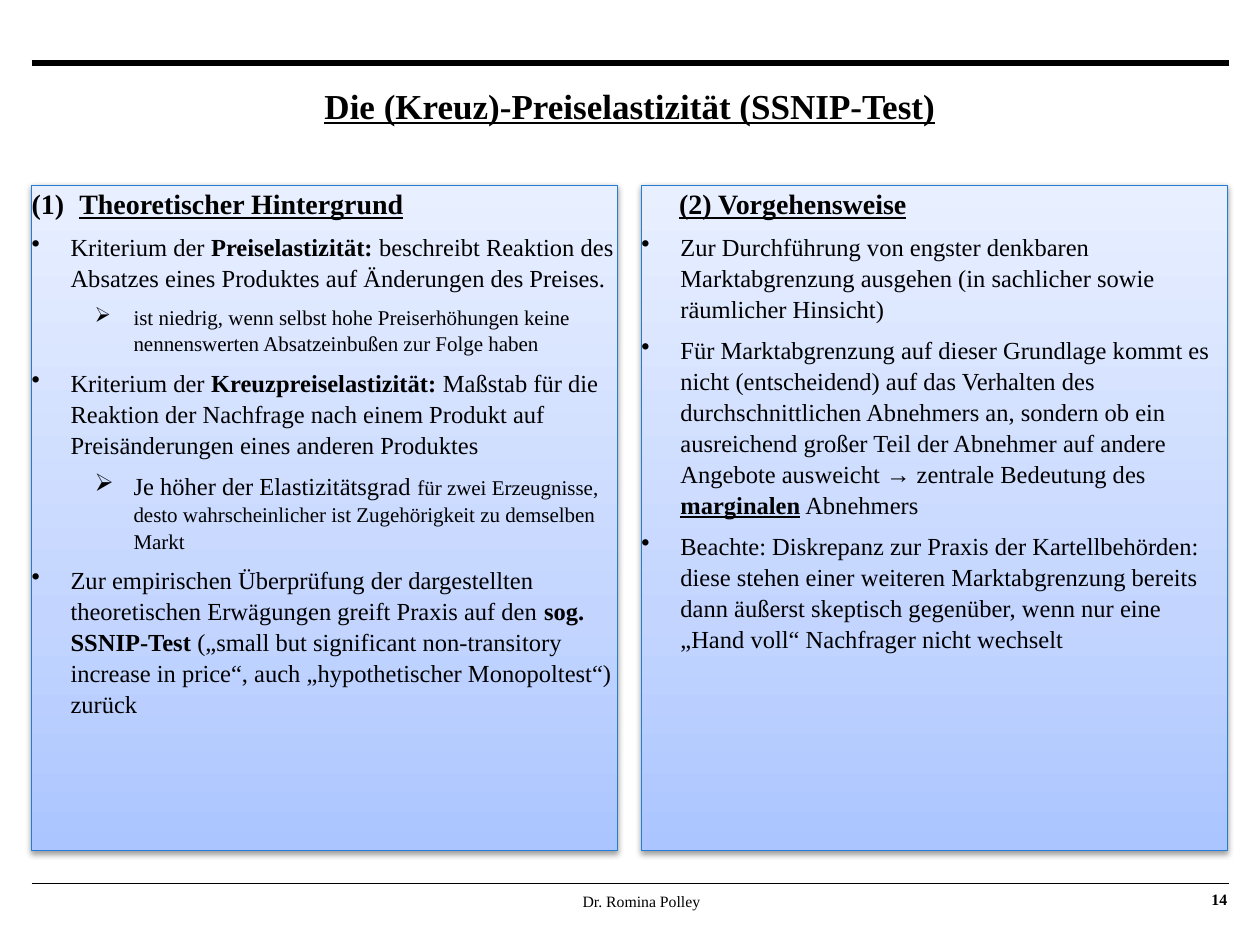
from copy import deepcopy
from lxml import etree
from pptx import Presentation, util as u
from pptx.dml.color import RGBColor
from pptx.enum import shapes, text
from pptx.oxml import ns

presentation = Presentation()
presentation.slide_width = u.Inches(10)
presentation.slide_height = u.Inches(7.5)
slide = presentation.slides.add_slide(presentation.slide_layouts[6])
column = presentation.slide_width / 40
row = presentation.slide_height / 30


def color(value):
    return RGBColor.from_string(value)


def write(paragraph, runs, size):
    paragraph.font.name = "Times New Roman"
    paragraph.font.size = u.Pt(size)
    paragraph.font.color.rgb = color("000000")
    for words, style in runs:
        run = paragraph.add_run()
        run.text = words
        if "b" in style:
            run.font.bold = True
        if "u" in style:
            run.font.underline = True
        if "s" in style:
            run.font.size = u.Pt(12)


for line_row, weight in [(2, 3), (28.04, 0.5)]:
    line = slide.shapes.add_connector(
        shapes.MSO_CONNECTOR.STRAIGHT,
        int(column), int(line_row * row), int(39 * column), int(line_row * row))
    line.line.color.rgb = color("000000")
    line.line.width = u.Pt(weight)
    etree.SubElement(line._element.spPr, ns.qn("a:effectLst"))

top, middle = text.MSO_ANCHOR.TOP, text.MSO_ANCHOR.MIDDLE
center, right = text.PP_ALIGN.CENTER, text.PP_ALIGN.RIGHT
labels = [
    ("Die (Kreuz)-Preiselastizität (SSNIP-Test)", "bu", 20, center, top, 1, 2.68, 38, 2.56, 0),
    ("Dr. Romina Polley", "", 9, center, middle, 6.32, 28.32, 28.08, 0.8, 0.2),
    ("14", "b", 9, right, middle, 36.32, 28.04, 2.64, 1.04, 0),
]
for words, style, size, alignment, anchor, left, upper, width, height, inset in labels:
    label = slide.shapes.add_textbox(
        int(left * column), int(upper * row), int(width * column), int(height * row))
    frame = label.text_frame
    frame.word_wrap = True
    frame.vertical_anchor = anchor
    frame.margin_left = frame.margin_right = u.Inches(inset)
    frame.margin_top = 0
    frame.margin_bottom = u.Inches(inset / 4)
    frame.paragraphs[0].alignment = alignment
    write(frame.paragraphs[0], [(words, style)], size)

kinds = {
    "number": (16, 0.38, -0.38, "buAutoNum", {"type": "arabicParenBoth"}),
    "heading": (16, 0.3, 0, "buNone", {}),
    "point": (14, 0.31, -0.31, "buChar", {"char": "•"}),
    "detail": (14, 0.81, -0.31, "buChar", {"char": "➢"}),
}
theory = [
    ("number", [("Theoretischer Hintergrund", "bu")]),
    ("point", [
        ("Kriterium der ", ""),
        ("Preiselastizität: ", "b"),
        ("beschreibt Reaktion des Absatzes eines Produktes auf Änderungen des Preises.", "")]),
    ("detail", [
        ("ist niedrig, wenn selbst hohe Preiserhöhungen keine nennenswerten "
         "Absatzeinbußen zur Folge haben", "s")]),
    ("point", [
        ("Kriterium der ", ""),
        ("Kreuzpreiselastizität: ", "b"),
        ("Maßstab für die Reaktion der Nachfrage nach einem Produkt auf "
         "Preisänderungen eines anderen Produktes", "")]),
    ("detail", [
        ("Je höher der Elastizitätsgrad ", ""),
        ("für zwei Erzeugnisse, desto wahrscheinlicher ist Zugehörigkeit zu "
         "demselben Markt", "s")]),
    ("point", [
        ("Zur empirischen Überprüfung der dargestellten theoretischen Erwägungen "
         "greift Praxis auf den ", ""),
        ("sog. SSNIP-Test ", "b"),
        ("(„small but significant non-transitory increase in price“, auch "
         "„hypothetischer Monopoltest“) zurück", "")]),
]
procedure = [
    ("heading", [("(2) Vorgehensweise", "bu")]),
    ("point", [
        ("Zur Durchführung von engster denkbaren Marktabgrenzung ausgehen "
         "(in sachlicher sowie räumlicher Hinsicht)", "")]),
    ("point", [
        ("Für Marktabgrenzung auf dieser Grundlage kommt es nicht (entscheidend) auf "
         "das Verhalten des durchschnittlichen Abnehmers an, sondern ob ein "
         "ausreichend großer Teil der Abnehmer auf andere Angebote ausweicht → "
         "zentrale Bedeutung des ", ""),
        ("marginalen", "bu"),
        (" Abnehmers", "")]),
    ("point", [
        ("Beachte: Diskrepanz zur Praxis der Kartellbehörden: diese stehen einer "
         "weiteren Marktabgrenzung bereits dann äußerst skeptisch gegenüber, wenn "
         "nur eine „Hand voll“ Nachfrager nicht wechselt", "")]),
]

for left, content in [(1, theory), (20.36, procedure)]:
    panel = slide.shapes.add_shape(
        shapes.MSO_SHAPE.RECTANGLE,
        int(left * column), int(5.88 * row), int(18.6 * column), int(21.12 * row))
    panel.line.color.rgb = color("247CD5")
    panel.line.width = u.Pt(0.75)
    panel.fill.gradient()
    panel.fill.gradient_angle = 90
    last_stop = panel._element.spPr.find(".//" + ns.qn("a:gs"))
    last_stop.addnext(deepcopy(last_stop))
    tones = [(0, "AAC5FF"), (0.35, "C3D5FF"), (1, "E8EFFF")]
    for stop, (position, tone) in zip(panel.fill.gradient_stops, tones):
        stop.position = position
        stop.color.rgb = color(tone)

    panel.shadow.inherit = False
    effects = panel._element.spPr.find(ns.qn("a:effectLst"))
    shadow = etree.SubElement(
        effects, ns.qn("a:outerShdw"), blurRad=str(u.Pt(3.1)), dist=str(u.Pt(1.6)),
        dir="5400000", rotWithShape="0")
    shade = etree.SubElement(shadow, ns.qn("a:srgbClr"), val="000000")
    etree.SubElement(shade, ns.qn("a:alpha"), val="38000")

    frame = panel.text_frame
    frame.word_wrap = True
    frame.vertical_anchor = top
    frame.margin_left = frame.margin_right = frame.margin_top = frame.margin_bottom = 0
    for index, (kind, runs) in enumerate(content):
        paragraph = frame.add_paragraph() if index else frame.paragraphs[0]
        size, margin, indent, bullet, attributes = kinds[kind]
        paragraph.alignment = text.PP_ALIGN.LEFT
        paragraph.level = int(kind == "detail")
        paragraph.line_spacing = 1.05
        paragraph.space_after = u.Pt(6)
        write(paragraph, runs, size)
        properties = paragraph._p.get_or_add_pPr()
        properties.set("marL", str(u.Inches(margin)))
        properties.set("indent", str(u.Inches(indent)))
        mark = etree.Element(ns.qn("a:" + bullet), attributes)
        properties.find(ns.qn("a:defRPr")).addprevious(mark)

presentation.save("out.pptx")
